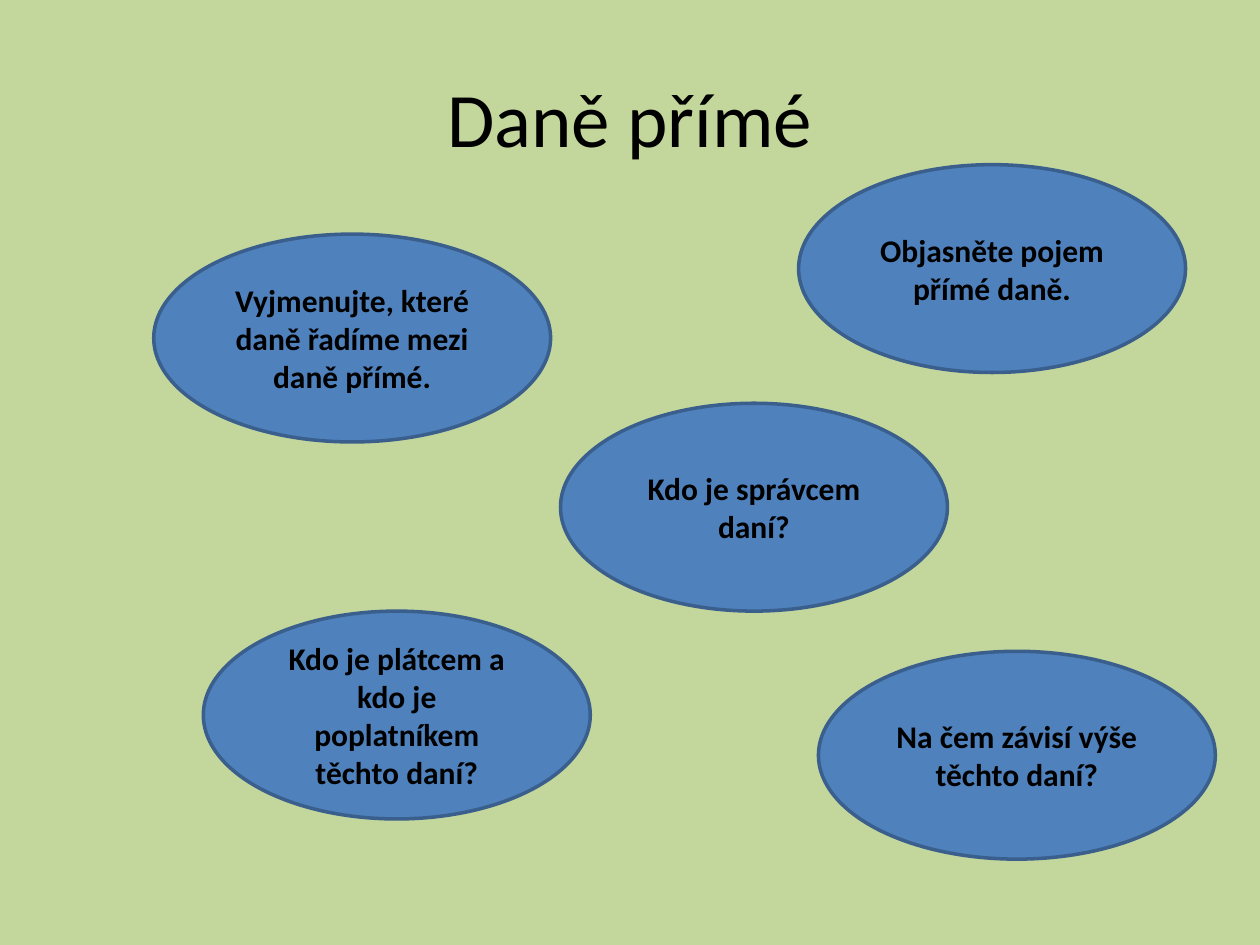
from pptx import Presentation
from pptx.dml.color import RGBColor
from pptx.enum.shapes import MSO_SHAPE
from pptx.enum.text import MSO_ANCHOR, PP_ALIGN
from pptx.util import Cm, Pt

OVAL = MSO_SHAPE.OVAL
MIDDLE = MSO_ANCHOR.MIDDLE
CENTER = PP_ALIGN.CENTER

GREEN = RGBColor(0xC3, 0xD6, 0x9B)
BLUE = RGBColor(0x4F, 0x81, 0xBD)
DARK_BLUE = RGBColor(0x3A, 0x5F, 0x8C)
BLACK = RGBColor(0, 0, 0)

FONT = "Calibri"
NARROW, WIDE, OVAL_HEIGHT = 7.8, 8, 4.19

QUESTIONS = [
    (3.1, 4.72, WIDE, "Vyjmenujte, které daně řadíme mezi daně přímé."),
    (16.1, 3.32, NARROW, "Objasněte pojem přímé daně."),
    (11.3, 8.13, NARROW, "Kdo je správcem daní?"),
    (4.1, 12.32, NARROW, "Kdo je plátcem a kdo je poplatníkem těchto daní?"),
    (16.5, 13.13, WIDE, "Na čem závisí výše těchto daní?"),
]


def write_text(tf, text, size=18, bold=False, color=BLACK):
    """Fill a text frame with one centred, formatted paragraph."""
    tf.word_wrap = True
    tf.vertical_anchor = MIDDLE
    p = tf.paragraphs[0]
    p.alignment = CENTER
    r = p.add_run()
    r.text = text
    r.font.name = FONT
    r.font.size = Pt(size)
    r.font.bold = bold
    r.font.color.rgb = color


def add_title(s, text):
    """Add the slide heading."""
    sp = s.shapes.add_textbox(Cm(1.27), Cm(0.76), Cm(22.86), Cm(3.18))
    write_text(sp.text_frame, text, size=44)


def add_question(s, left, top, width, text):
    """Add an oval that holds one question."""
    sp = s.shapes.add_shape(OVAL, Cm(left), Cm(top), Cm(width), Cm(OVAL_HEIGHT))
    sp.shadow.inherit = False
    sp.fill.solid()
    sp.fill.fore_color.rgb = BLUE
    sp.line.color.rgb = DARK_BLUE
    sp.line.width = Pt(2)
    write_text(sp.text_frame, text, bold=True)


def main():
    """Build the slide and save it."""
    prs = Presentation()
    prs.slide_width, prs.slide_height = Cm(25.4), Cm(19.05)
    s = prs.slides.add_slide(prs.slide_layouts[6])
    s.background.fill.solid()
    s.background.fill.fore_color.rgb = GREEN
    add_title(s, "Daně přímé")
    for question in QUESTIONS:
        add_question(s, *question)
    prs.save("out.pptx")


if __name__ == "__main__":
    main()
